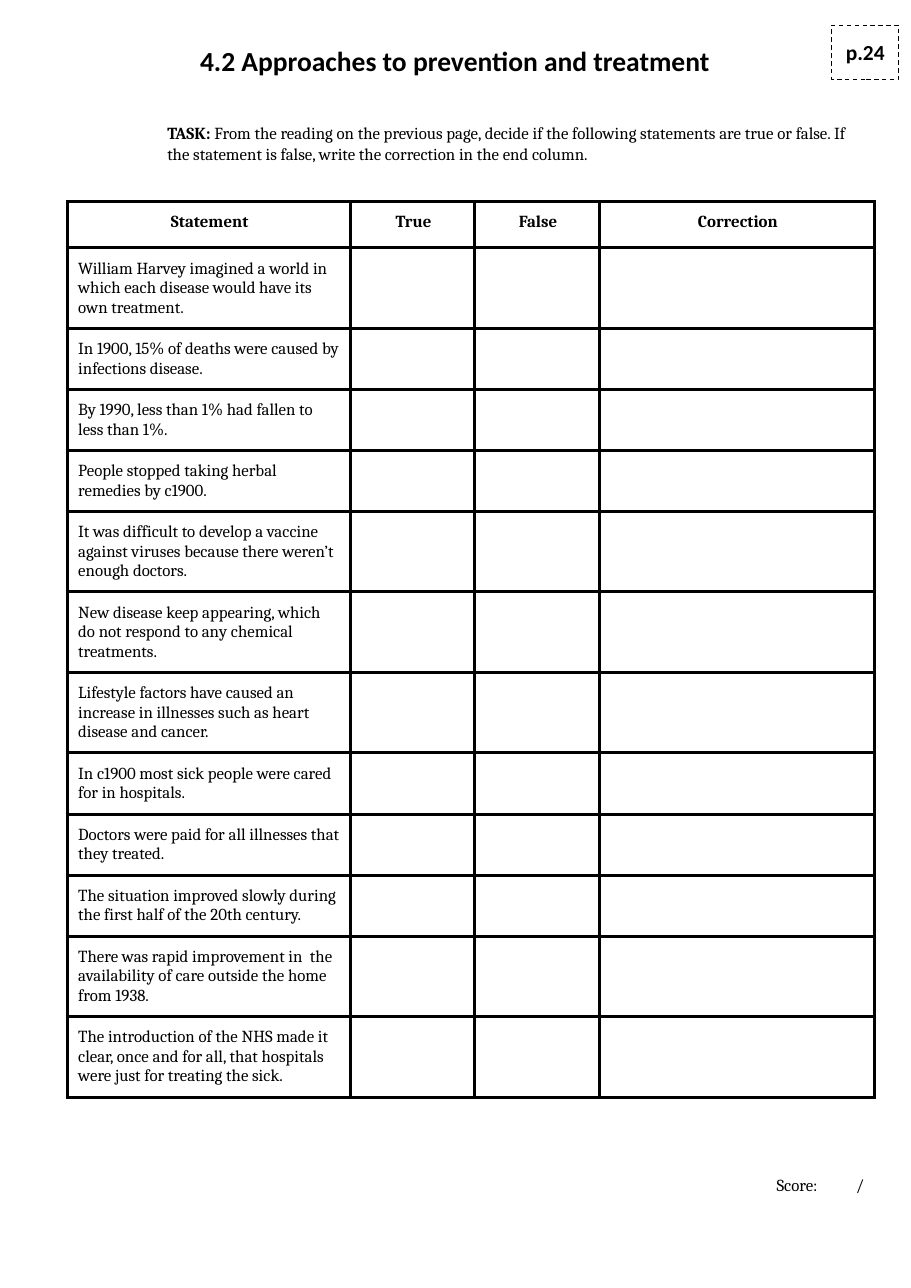
import pptx
import pptx.dml.color
import pptx.enum.dml
import pptx.enum.shapes
import pptx.enum.text
import pptx.oxml
import pptx.oxml.ns
import pptx.util

Inches = pptx.util.Inches
ALIGN = pptx.enum.text.PP_ALIGN
ANCHOR = pptx.enum.text.MSO_ANCHOR
BLACK = "000000"
WHITE = "FFFFFF"
INSET = 0.1
HEADINGS = ["Statement", "True", "False", "Correction"]
COLUMN_WIDTHS = [2.57, 1.13, 1.13, 2.5]
HEADER_HEIGHT = 0.42
HEIGHT_BY_LINES = {2: 0.55, 3: 0.73}
STATEMENTS = [
    (3, "William Harvey imagined a world in which each disease would have its own treatment."),
    (2, "In 1900, 15% of deaths were caused by infections disease."),
    (2, "By 1990, less than 1% had fallen to less than 1%."),
    (2, "People stopped taking herbal remedies by c1900."),
    (3, "It was difficult to develop a vaccine against viruses because there weren’t enough doctors."),
    (3, "New disease keep appearing, which do not respond to any chemical treatments."),
    (3, "Lifestyle factors have caused an increase in illnesses such as heart disease and cancer."),
    (2, "In c1900 most sick people were cared for in hospitals."),
    (2, "Doctors were paid for all illnesses that they treated."),
    (2, "The situation improved slowly during the first half of the 20th century."),
    (3, "There was rapid improvement in  the availability of care outside the home from 1938."),
    (3, "The introduction of the NHS made it clear, once and for all, that hospitals were just for treating the sick."),
]


def color(value):
    """Return the colour of a hex string."""
    return pptx.dml.color.RGBColor.from_string(value)


def format_run(run, font="Cambria", size=11, bold=False):
    """Set the font of one run."""
    run.font.name = font
    run.font.size = pptx.util.Pt(size)
    run.font.bold = bold
    run.font.color.rgb = color(BLACK)


def write_text(text_frame, text, alignment=ALIGN.LEFT, **font):
    """Write one formatted paragraph and return it."""
    text_frame.text = text
    paragraph = text_frame.paragraphs[0]
    paragraph.alignment = alignment
    for run in paragraph.runs:
        format_run(run, **font)
    return paragraph


def set_insets(target, right=INSET):
    """Give a text frame or cell its insets."""
    target.margin_left = target.margin_top = target.margin_bottom = Inches(INSET)
    target.margin_right = Inches(right)


def prepare_frame(text_frame, anchor=ANCHOR.TOP):
    """Set wrapping, insets and anchor of a text frame."""
    text_frame.word_wrap = True
    text_frame.auto_size = pptx.enum.text.MSO_AUTO_SIZE.NONE
    text_frame.vertical_anchor = anchor
    set_insets(text_frame)


def add_title(slide, left, top, width, height):
    """Place the worksheet title in the title placeholder."""
    title = slide.shapes.title
    title.left, title.top = Inches(left), Inches(top)
    title.width, title.height = Inches(width), Inches(height)
    prepare_frame(title.text_frame, ANCHOR.MIDDLE)
    write_text(title.text_frame, "4.2 Approaches to prevention and treatment",
               ALIGN.CENTER, font="Calibri", size=18, bold=True)


def add_task(slide, left, top, width, height):
    """Add the task instructions."""
    box = slide.shapes.add_textbox(*map(Inches, (left, top, width, height)))
    prepare_frame(box.text_frame)
    paragraph = write_text(box.text_frame, "TASK: ", bold=True)
    paragraph.line_spacing = 1.04
    instructions = paragraph.add_run()
    instructions.text = ("From the reading on the previous page, decide if the following "
                         "statements are true or false. If the statement is false, "
                         "write the correction in the end column.")
    format_run(instructions)


def style_cell(cell):
    """Give a cell black borders, no fill and its insets."""
    properties = cell._tc.get_or_add_tcPr()
    for side in "LRTB":
        properties.append(pptx.oxml.parse_xml(
            f'<a:ln{side} {pptx.oxml.ns.nsdecls("a")} w="{pptx.util.Pt(2.25)}">'
            f'<a:solidFill><a:srgbClr val="{BLACK}"/></a:solidFill></a:ln{side}>'))
    cell.fill.background()
    set_insets(cell, right=0.08)


def add_statement_table(slide, left, top):
    """Add the true or false table."""
    heights = [HEADER_HEIGHT] + [HEIGHT_BY_LINES[lines] for lines, _ in STATEMENTS]
    frame = slide.shapes.add_table(
        len(heights), len(HEADINGS), Inches(left), Inches(top),
        Inches(sum(COLUMN_WIDTHS)), Inches(sum(heights)))
    table = frame.table
    table.first_row = table.horz_banding = False
    for column, width in zip(table.columns, COLUMN_WIDTHS):
        column.width = Inches(width)
    for row, height in zip(table.rows, heights):
        row.height = Inches(height)
    for cell in table.iter_cells():
        style_cell(cell)
    for index, heading in enumerate(HEADINGS):
        write_text(table.cell(0, index).text_frame, heading, ALIGN.CENTER, bold=True)
    for index, (_, statement) in enumerate(STATEMENTS, 1):
        write_text(table.cell(index, 0).text_frame, statement)


def add_score(slide, left, top, width, height):
    """Add the score line, with a tab before the slash."""
    box = slide.shapes.add_textbox(*map(Inches, (left, top, width, height)))
    prepare_frame(box.text_frame)
    box.text_frame.margin_left = Inches(0.61)
    box.text_frame.margin_right = 0
    paragraph = write_text(box.text_frame, "Score:\t/")
    paragraph._p.get_or_add_pPr().append(pptx.oxml.parse_xml(
        f'<a:tabLst {pptx.oxml.ns.nsdecls("a")}>'
        f'<a:tab pos="{Inches(0.72)}" algn="l"/></a:tabLst>'))


def add_page_label(slide, left, top, width, height):
    """Add the dashed page number box."""
    label = slide.shapes.add_shape(
        pptx.enum.shapes.MSO_SHAPE.RECTANGLE, *map(Inches, (left, top, width, height)))
    label.shadow.inherit = False
    label.fill.solid()
    label.fill.fore_color.rgb = color(WHITE)
    label.line.color.rgb = color(BLACK)
    label.line.width = pptx.util.Pt(0.75)
    label.line.dash_style = pptx.enum.dml.MSO_LINE.DASH
    prepare_frame(label.text_frame, ANCHOR.MIDDLE)
    write_text(label.text_frame, "p.24", ALIGN.CENTER, font="Calibri", size=14, bold=True)


def main():
    """Build and save the worksheet."""
    presentation = pptx.Presentation()
    presentation.slide_width = Inches(8.27)
    presentation.slide_height = Inches(11.69)
    slide = presentation.slides.add_slide(presentation.slide_layouts[5])
    add_title(slide, 0.61, 0.33, 7.04, 0.44)
    add_task(slide, 1.42, 1.01, 6.51, 0.56)
    add_statement_table(slide, 0.61, 1.83)
    add_score(slide, 6.44, 10.56, 1.5, 0.56)
    add_page_label(slide, 7.55, 0.23, 0.61, 0.49)
    presentation.save("out.pptx")


if __name__ == "__main__":
    main()
